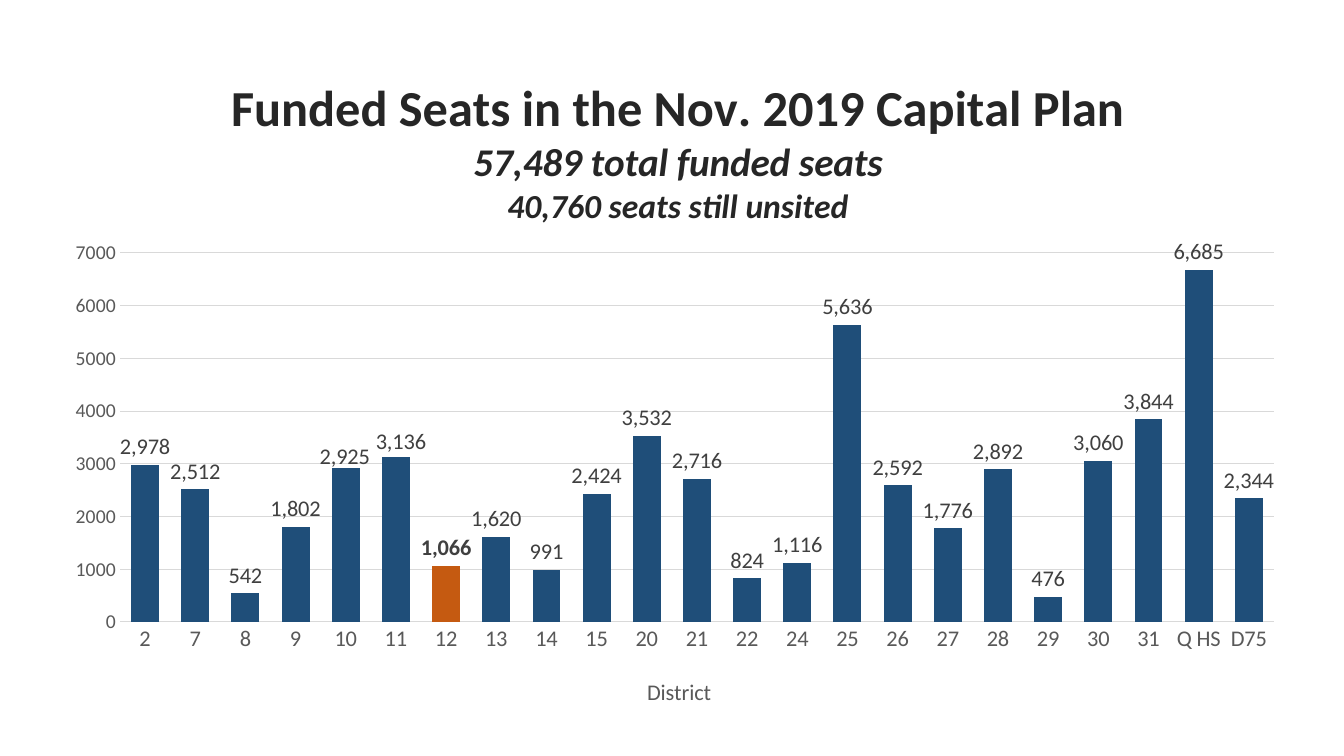
from dataclasses import dataclass

from lxml.etree import SubElement
from pptx import Presentation
from pptx.chart.data import CategoryChartData
from pptx.dml.color import RGBColor
from pptx.enum.chart import XL_CHART_TYPE, XL_LABEL_POSITION, XL_TICK_MARK
from pptx.oxml import parse_xml
from pptx.oxml.ns import nsdecls, qn
from pptx.util import Pt

SCALE = 914400 / 100.8
FONT = "Calibri"
HEX = {
    "bar": "1F4E79",
    "mark": "C55A11",
    "title": "262626",
    "label": "404040",
    "axis": "595959",
    "grid": "D9D9D9",
}


@dataclass
class Box:
    left: int
    top: int
    width: int = 0
    height: int = 0


@dataclass
class Line:
    text: str
    size: int
    color: str
    bold: bool = False
    italic: bool = False


@dataclass
class Seat:
    name: str
    count: int


FRAME = Box(51, 48, 1248, 675)
PLOT = Box(120, 253, 1154, 369)
HEAD = Box(228, 73)
FOOT = Box(643, 673)
TITLE = [
    Line("Funded Seats in the Nov. 2019 Capital Plan", 36, "title", True),
    Line("57,489 total funded seats", 28, "title", True, True),
    Line("40,760 seats still unsited", 24, "title", True, True),
]
SEATS = [
    Seat("2", 2978), Seat("7", 2512), Seat("8", 542), Seat("9", 1802),
    Seat("10", 2925), Seat("11", 3136), Seat("12", 1066), Seat("13", 1620),
    Seat("14", 991), Seat("15", 2424), Seat("20", 3532), Seat("21", 2716),
    Seat("22", 824), Seat("24", 1116), Seat("25", 5636), Seat("26", 2592),
    Seat("27", 1776), Seat("28", 2892), Seat("29", 476), Seat("30", 3060),
    Seat("31", 3844), Seat("Q HS", 6685), Seat("D75", 2344),
]
MARK = "12"
SHIFTS = {"10": Box(-1, 7), "11": Box(5, 3)}


def emu(px: int) -> int:
    return round(px * SCALE)


def color(name: str) -> RGBColor:
    return RGBColor.from_string(HEX[name])


def style(font, size: int, tint: str, bold: bool = False, italic: bool = False) -> None:
    font.name = FONT
    font.size = Pt(size)
    font.bold = bold
    font.italic = italic
    font.color.rgb = color(tint)


def layout(x: int, y: int, size: Box | None = None, edge: bool = True):
    root = parse_xml(f"<c:layout {nsdecls('c')}/>")
    manual = SubElement(root, qn("c:manualLayout"))
    parts = [("layoutTarget", "inner")] if size else []
    if edge:
        parts += [("xMode", "edge"), ("yMode", "edge")]
    parts += [("x", x / FRAME.width), ("y", y / FRAME.height)]
    if size:
        parts += [("w", size.width / FRAME.width), ("h", size.height / FRAME.height)]
    for tag, value in parts:
        SubElement(manual, qn(f"c:{tag}")).set("val", str(value))
    return root


def place(node, box: Box, size: Box | None = None) -> None:
    for old in node.findall(qn("c:layout")):
        node.remove(old)
    new = layout(box.left - FRAME.left, box.top - FRAME.top, size)
    text = node.find(qn("c:tx"))
    if text is None:
        node.insert(0, new)
    else:
        text.addnext(new)


def write(title, lines: list[Line], box: Box) -> None:
    frame = title.text_frame
    frame.text = "\n".join(line.text for line in lines)
    for para, line in zip(frame.paragraphs, lines):
        for run in para.runs:
            style(run.font, line.size, line.color, line.bold, line.italic)
    place(title._element, box)


def trim(axis, size: int) -> None:
    axis.major_tick_mark = XL_TICK_MARK.NONE
    axis.minor_tick_mark = XL_TICK_MARK.NONE
    style(axis.tick_labels.font, size, "axis")


def rule(line) -> None:
    line.color.rgb = color("grid")
    line.width = Pt(0.75)


def axes(chart) -> None:
    cat, val = chart.category_axis, chart.value_axis
    trim(cat, 16)
    trim(val, 14)
    rule(cat.format.line)
    rule(val.major_gridlines.format.line)
    val.format.line.fill.background()
    val.minimum_scale, val.maximum_scale, val.major_unit = 0, 7000, 1000
    val.tick_labels.number_format = "0"
    val.tick_labels.number_format_is_linked = False
    write(cat.axis_title, [Line("District", 16, "axis")], FOOT)


def bars(chart) -> None:
    plot = chart.plots[0]
    plot.gap_width, plot.overlap = 80, 100
    plot.vary_by_categories = False
    row = plot.series[0]
    row.invert_if_negative = False
    row.format.fill.solid()
    row.format.fill.fore_color.rgb = color("bar")
    tags = row.data_labels
    tags.show_value = True
    tags.position = XL_LABEL_POSITION.OUTSIDE_END
    tags.number_format = "#,##0"
    tags.number_format_is_linked = False
    style(tags.font, 16, "label")
    for i, seat in enumerate(SEATS):
        if seat.name != MARK and seat.name not in SHIFTS:
            continue
        point = row.points[i]
        tag = point.data_label
        style(tag.font, 16, "label", seat.name == MARK)
        tag.position = XL_LABEL_POSITION.OUTSIDE_END
        if seat.name == MARK:
            point.format.fill.solid()
            point.format.fill.fore_color.rgb = color("mark")
        else:
            move = SHIFTS[seat.name]
            node = tags._element.xpath(f'c:dLbl[c:idx/@val="{i}"]')[0]
            node.find(qn("c:idx")).addnext(layout(move.left, move.top, edge=False))


def main() -> None:
    deck = Presentation()
    deck.slide_width, deck.slide_height = emu(1344), emu(756)
    slide = deck.slides.add_slide(deck.slide_layouts[6])
    data = CategoryChartData(number_format="#,##0")
    data.categories = [seat.name for seat in SEATS]
    data.add_series("Funded seats", [seat.count for seat in SEATS])
    spot = [emu(px) for px in (FRAME.left, FRAME.top, FRAME.width, FRAME.height)]
    chart = slide.shapes.add_chart(XL_CHART_TYPE.COLUMN_CLUSTERED, *spot, data).chart
    chart.has_legend = False
    chart.font.name, chart.font.size = FONT, Pt(10)
    write(chart.chart_title, TITLE, HEAD)
    chart.chart_title.include_in_layout = False
    axes(chart)
    bars(chart)
    place(chart._chartSpace.chart.plotArea, PLOT, PLOT)
    deck.save("out.pptx")


if __name__ == "__main__":
    main()
